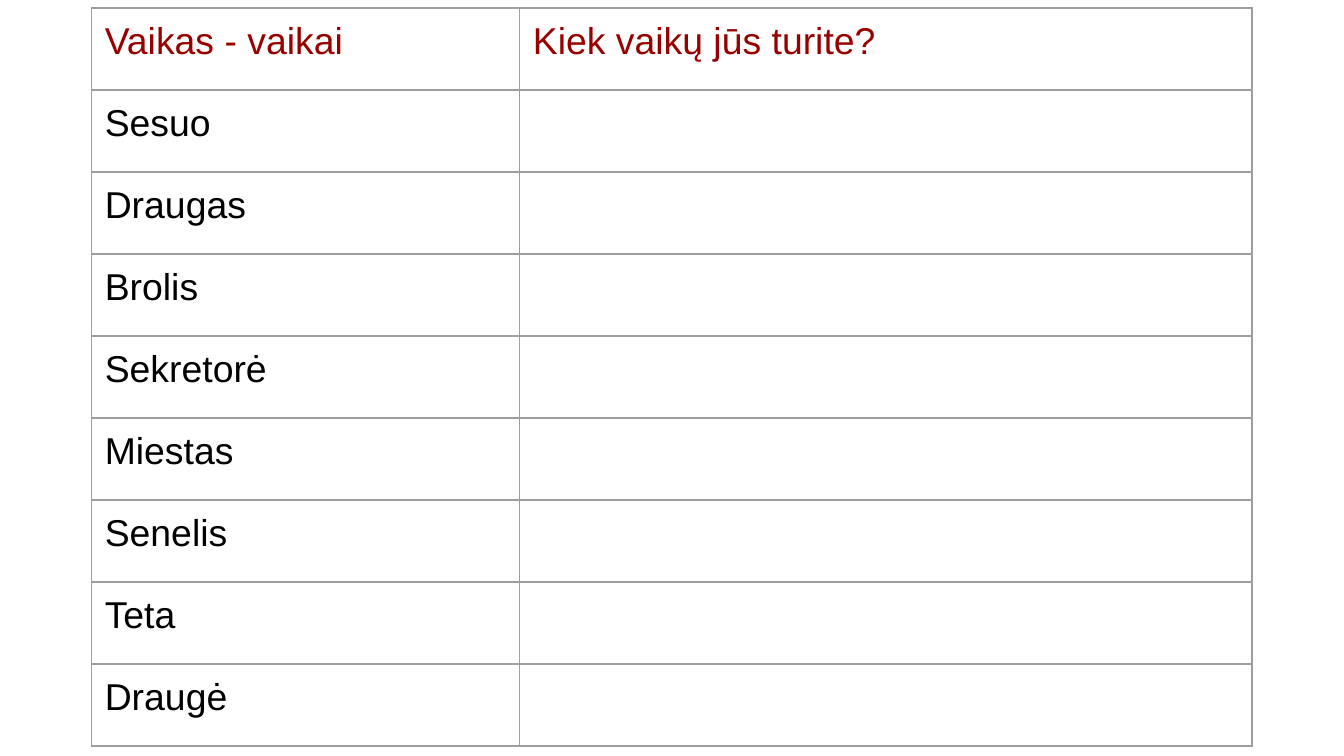
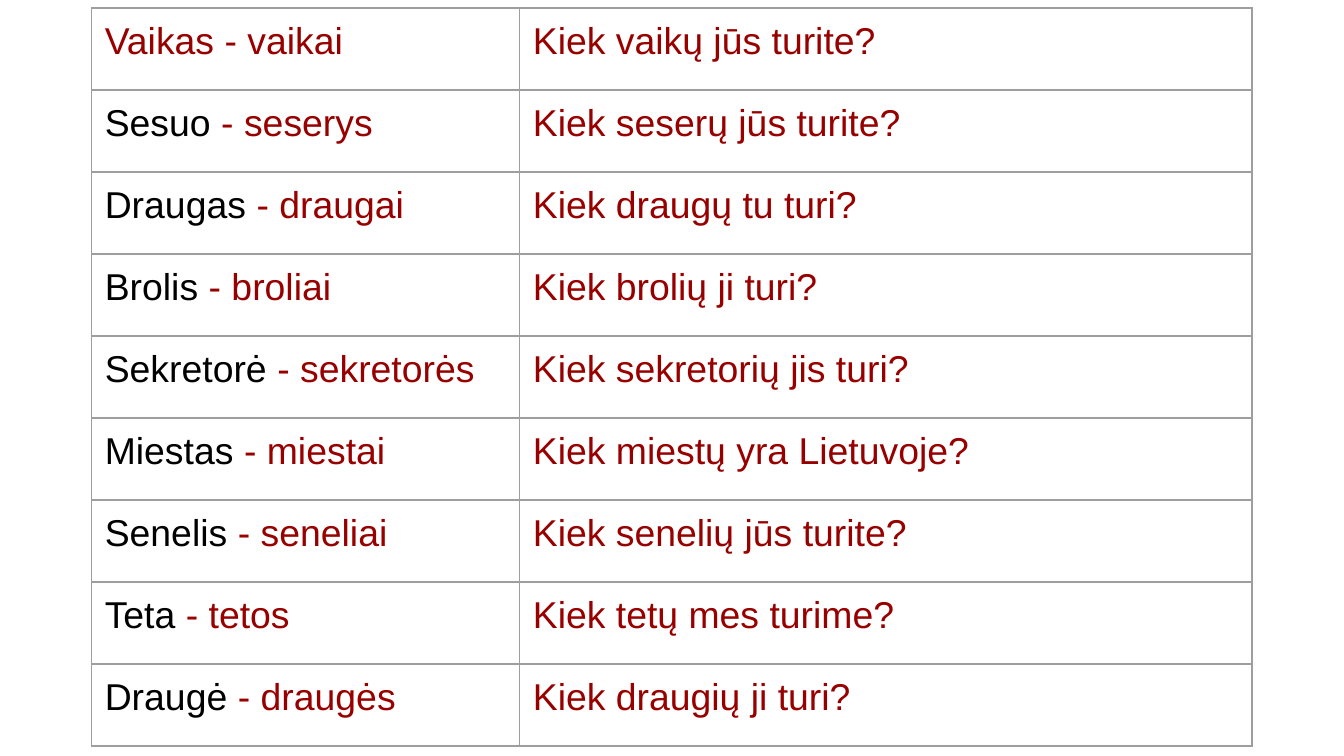
from lxml.etree import SubElement
from pptx import Presentation
from pptx.dml.color import RGBColor
from pptx.oxml.ns import qn
from pptx.util import Cm, Pt

RED, BLACK, GREY = "980000", "000000", "9E9E9E"

# Singular, plural, question
WORDS = [
    ("Vaikas", "vaikai", "Kiek vaikų jūs turite?"),
    ("Sesuo", "seserys", "Kiek seserų jūs turite?"),
    ("Draugas", "draugai", "Kiek draugų tu turi?"),
    ("Brolis", "broliai", "Kiek brolių ji turi?"),
    ("Sekretorė", "sekretorės", "Kiek sekretorių jis turi?"),
    ("Miestas", "miestai", "Kiek miestų yra Lietuvoje?"),
    ("Senelis", "seneliai", "Kiek senelių jūs turite?"),
    ("Teta", "tetos", "Kiek tetų mes turime?"),
    ("Draugė", "draugės", "Kiek draugių ji turi?"),
]


def color(value):
    return RGBColor.from_string(value)


class Worksheet:
    font = {"name": "Arial", "size": Pt(20), "bold": False}
    margins = dict.fromkeys(
        ("margin_left", "margin_right", "margin_top", "margin_bottom"), Cm(0.25))
    plain_table = {"first_row": False, "horz_banding": False}
    left, top, row_height = Cm(1.73), Cm(0.15), Cm(1.55)
    column_widths = Cm(8.09), Cm(13.84)

    def __init__(self):
        self.deck = Presentation()
        self.deck.slide_width, self.deck.slide_height = Cm(25.4), Cm(14.29)
        self.page = None

    def add_page(self):
        self.page = self.deck.slides.add_slide(self.deck.slide_layouts[6])

    def set_all(self, target, values):
        for name, value in values.items():
            setattr(target, name, value)

    def add_borders(self, cell):
        properties = cell._tc.get_or_add_tcPr()
        for side in ("lnL", "lnR", "lnT", "lnB"):
            line = SubElement(properties, qn(f"a:{side}"), w=str(Pt(0.75)))
            fill = SubElement(line, qn("a:solidFill"))
            SubElement(fill, qn("a:srgbClr"), val=GREY)

    def fill_cell(self, cell, spans):
        self.set_all(cell, self.margins)
        self.add_borders(cell)
        cell.fill.background()
        para = cell.text_frame.paragraphs[0]
        for text, shade in spans:
            span = para.add_run()
            span.text = text
            self.set_all(span.font, self.font)
            span.font.color.rgb = color(shade)

    def add_table(self, rows):
        """Draw rows of cells, where a cell is a list of (text, colour) spans."""
        table = self.page.shapes.add_table(
            len(rows), len(self.column_widths), self.left, self.top,
            sum(self.column_widths), self.row_height * len(rows)).table
        self.set_all(table, self.plain_table)
        for column, width in zip(table.columns, self.column_widths):
            column.width = width
        for row, cells in zip(table.rows, rows):
            row.height = self.row_height
            for cell, spans in zip(row.cells, cells):
                self.fill_cell(cell, spans)


def word_row(singular, plural, question, is_example, show_answer):
    if is_example:
        return [[(f"{singular} - {plural}", RED)], [(question, RED)]]
    if show_answer:
        return [[(f"{singular} ", BLACK), (f"- {plural}", RED)], [(question, RED)]]
    return [[(singular, BLACK)], []]


def main():
    worksheet = Worksheet()
    for show_answer in (False, True):
        worksheet.add_page()
        worksheet.add_table([word_row(*words, index == 0, show_answer)
                             for index, words in enumerate(WORDS)])
    worksheet.deck.save("out.pptx")


if __name__ == "__main__":
    main()
